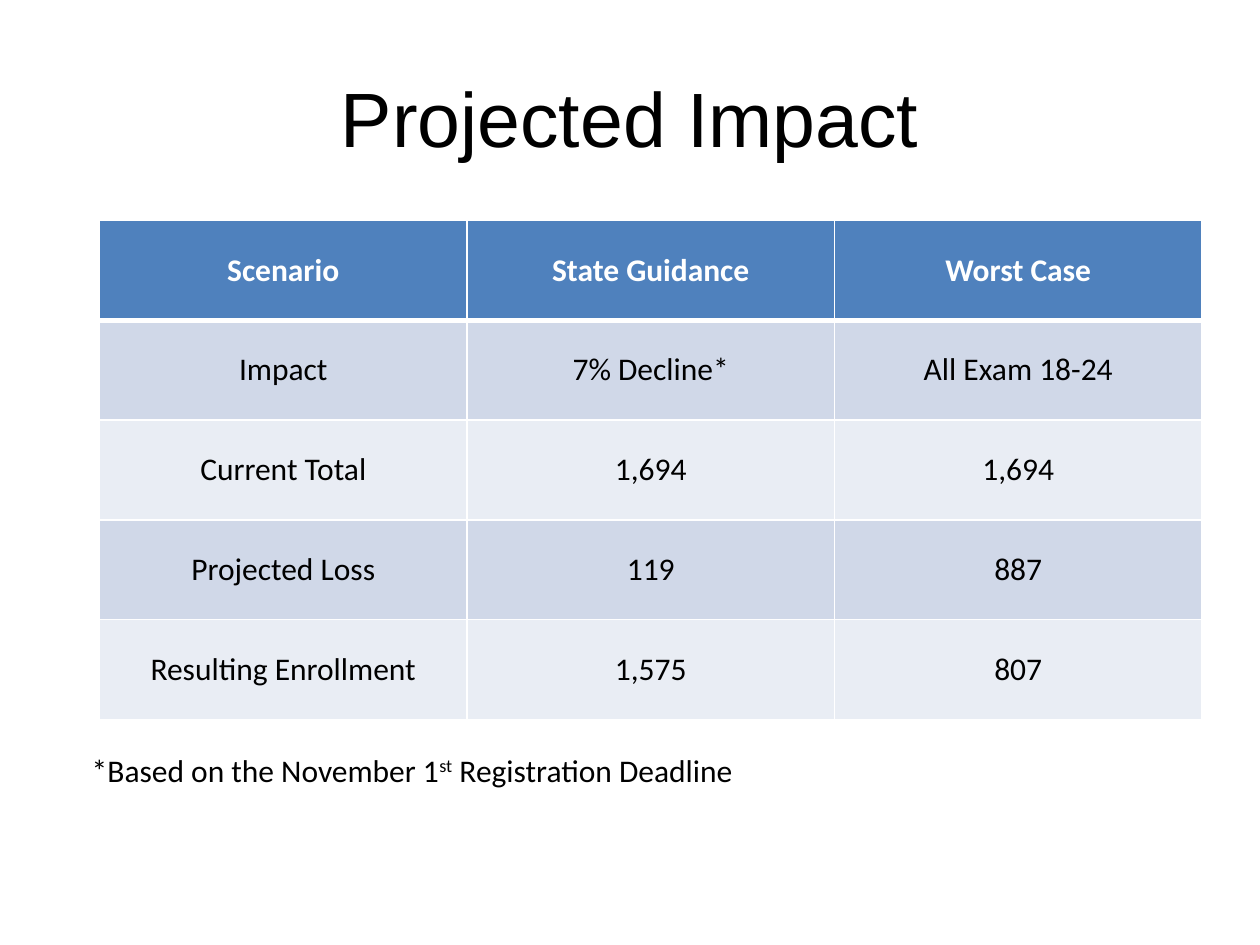
import dataclasses

import lxml.etree
import pptx
import pptx.dml.color
import pptx.enum.text
import pptx.oxml.ns
import pptx.util
from pptx.util import Inches


@dataclasses.dataclass(frozen=True)
class Theme:
    ink: str = "000000"
    white: str = "FFFFFF"
    header: str = "4F81BD"
    bands: tuple = ("D0D8E8", "E9EDF4")
    heading_font: str = "Arial"
    body_font: str = "Calibri"
    title_size: int = 44
    body_size: int = 18
    thin: int = 1
    thick: int = 3


theme = Theme()


def add_span(para, text, font, size, color, bold=False):
    span = para.add_run()
    span.text = text
    span.font.name = font
    span.font.size = pptx.util.Pt(size)
    span.font.bold = bold
    span.font.color.rgb = pptx.dml.color.RGBColor.from_string(color)
    return span


def add_border(cell, side, width):
    qn = pptx.oxml.ns.qn
    properties = cell._tc.get_or_add_tcPr()
    line = lxml.etree.SubElement(properties, qn(f"a:{side}"), w=str(pptx.util.Pt(width)))
    fill = lxml.etree.SubElement(line, qn("a:solidFill"))
    lxml.etree.SubElement(fill, qn("a:srgbClr"), val=theme.white)


deck = pptx.Presentation()
deck.slide_width, deck.slide_height = Inches(10), Inches(7.5)
page = deck.slides.add_slide(deck.slide_layouts[6])

# Title
box = page.shapes.add_textbox(Inches(0.5), Inches(0.3), Inches(9), Inches(1.25))
box.text_frame.word_wrap = True
box.text_frame.vertical_anchor = pptx.enum.text.MSO_ANCHOR.MIDDLE
para = box.text_frame.paragraphs[0]
para.alignment = pptx.enum.text.PP_ALIGN.CENTER
add_span(para, "Projected Impact", theme.heading_font, theme.title_size, theme.ink)

# Scenario table
scenarios = [
    ("Scenario", "State Guidance", "Worst Case"),
    ("Impact", "7% Decline*", "All Exam 18-24"),
    ("Current Total", "1,694", "1,694"),
    ("Projected Loss", "119", "887"),
    ("Resulting Enrollment", "1,575", "807"),
]
table = page.shapes.add_table(
    len(scenarios), 3, Inches(0.79), Inches(1.75), Inches(8.75), Inches(3.96)
).table
for row_index, row in enumerate(scenarios):
    is_header = row_index == 0
    fill_color = theme.header if is_header else theme.bands[(row_index - 1) % 2]
    text_color = theme.white if is_header else theme.ink
    for column_index, text in enumerate(row):
        cell = table.cell(row_index, column_index)
        cell.vertical_anchor = pptx.enum.text.MSO_ANCHOR.MIDDLE
        para = cell.text_frame.paragraphs[0]
        para.alignment = pptx.enum.text.PP_ALIGN.CENTER
        add_span(para, text, theme.body_font, theme.body_size, text_color, is_header)

        # Borders come before the fill in the cell properties
        add_border(cell, "lnL", theme.thin)
        add_border(cell, "lnR", theme.thin)
        add_border(cell, "lnT", theme.thick if row_index == 1 else theme.thin)
        add_border(cell, "lnB", theme.thick if is_header else theme.thin)
        cell.fill.solid()
        cell.fill.fore_color.rgb = pptx.dml.color.RGBColor.from_string(fill_color)

# Footnote
box = page.shapes.add_textbox(Inches(0.63), Inches(5.91), Inches(8.63), Inches(0.4))
box.text_frame.word_wrap = True
box.text_frame.auto_size = pptx.enum.text.MSO_AUTO_SIZE.SHAPE_TO_FIT_TEXT
para = box.text_frame.paragraphs[0]
for text in ("*Based on the November 1", "st", " Registration Deadline"):
    span = add_span(para, text, theme.body_font, theme.body_size, theme.ink)
    if text == "st":
        span.font._element.set("baseline", "30000")

deck.save("out.pptx")
